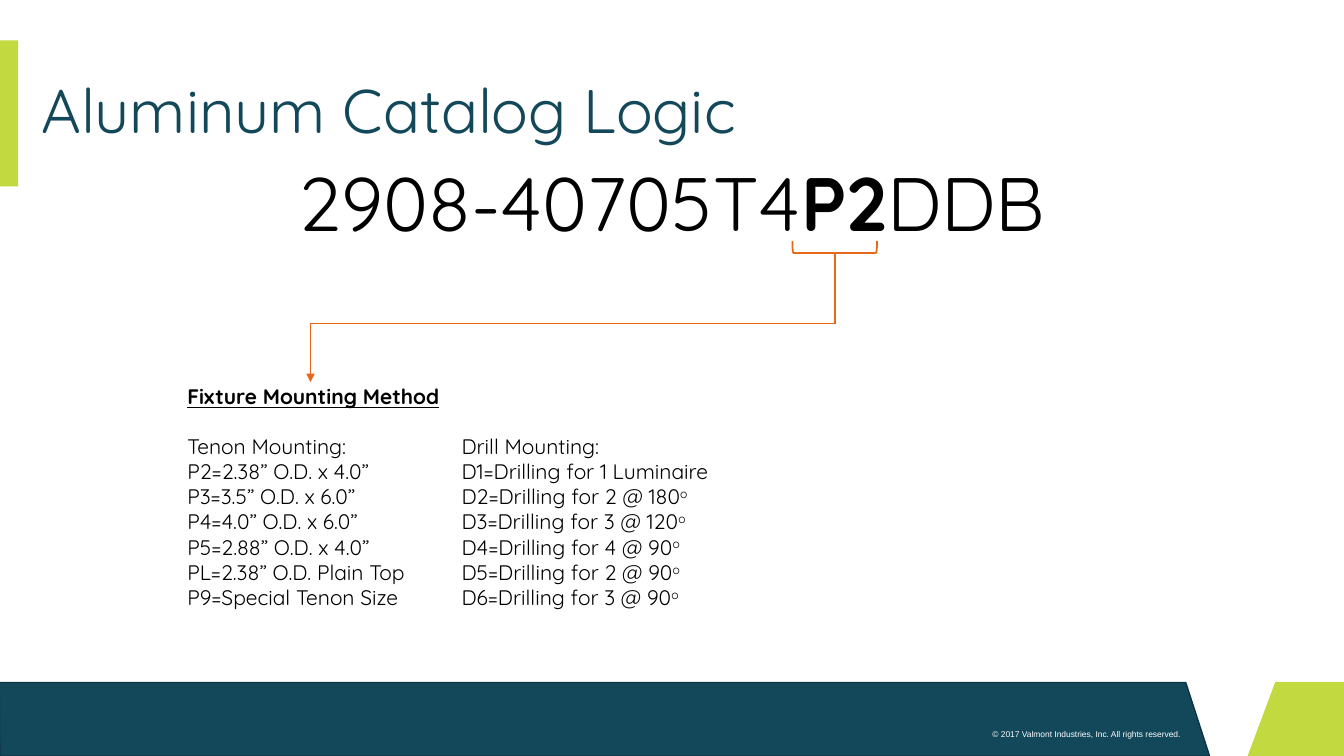
from dataclasses import dataclass

from lxml.etree import SubElement
from pptx import Presentation
from pptx.dml.color import RGBColor
from pptx.enum.shapes import MSO_CONNECTOR, MSO_SHAPE
from pptx.enum.text import MSO_ANCHOR, MSO_AUTO_SIZE, PP_ALIGN
from pptx.oxml.ns import qn
from pptx.util import Pt


@dataclass(frozen=True)
class Theme:
    teal: str = "13485B"
    teal_edge: str = "0E3543"
    lime: str = "C3D940"
    orange: str = "E6681A"
    black: str = "000000"
    white: str = "FFFFFF"
    font: str = "Quicksand"
    footer_font: str = "Arial"
    code_size: float = 54
    title_size: float = 44
    body_size: float = 15
    footer_size: float = 6
    line_width: float = 1.25


def write(para, text, size, color, font, bold=False, underline=False, raised=False):
    span = para.add_run()
    span.text = text
    span.font.size = Pt(size)
    span.font.name = font
    span.font.bold = bold
    span.font.underline = underline
    span.font.color.rgb = RGBColor.from_string(color)
    if raised:
        span._r.get_or_add_rPr().set("baseline", "30000")


class SlideBuilder:
    def __init__(self, page, theme):
        self.page = page
        self.theme = theme

    def paint(self, shape, fill=None, line=None, line_width=1):
        shape.shadow.inherit = False
        if fill:
            shape.fill.solid()
            shape.fill.fore_color.rgb = RGBColor.from_string(fill)
        else:
            shape.fill.background()
        if line:
            shape.line.color.rgb = RGBColor.from_string(line)
            shape.line.width = Pt(line_width)
        else:
            shape.line.fill.background()

    def polygon(self, points, fill, line=None):
        start, *others = [(Pt(x), Pt(y)) for x, y in points]
        outline = self.page.shapes.build_freeform(*start)
        outline.add_line_segments(others, close=True)
        self.paint(outline.convert_to_shape(), fill, line)

    def preset(self, kind, left, top, width, height, rotation=0, **paint_style):
        shape = self.page.shapes.add_shape(
            kind, Pt(left), Pt(top), Pt(width), Pt(height))
        shape.rotation = rotation
        self.paint(shape, **paint_style)

    def connector(self, start, end, arrow=False):
        line = self.page.shapes.add_connector(
            MSO_CONNECTOR.STRAIGHT, *map(Pt, start + end))
        line.line.color.rgb = RGBColor.from_string(self.theme.orange)
        line.line.width = Pt(self.theme.line_width)
        if arrow:
            SubElement(line.line._get_or_add_ln(), qn("a:tailEnd"), type="triangle")
        SubElement(line._element.spPr, qn("a:effectLst"))

    def text(self, left, top, width, height, rows, align=PP_ALIGN.LEFT,
             anchor=MSO_ANCHOR.TOP, wrap=True, grow=True, spacing=None, **style):
        """Add a text box; each row is a list of (text, extra format) pairs."""
        box = self.page.shapes.add_textbox(Pt(left), Pt(top), Pt(width), Pt(height))
        frame = box.text_frame
        frame.word_wrap = wrap
        frame.vertical_anchor = anchor
        frame.auto_size = MSO_AUTO_SIZE.SHAPE_TO_FIT_TEXT if grow else MSO_AUTO_SIZE.NONE
        look = {"size": self.theme.body_size, "color": self.theme.black,
                "font": self.theme.font} | style
        for index, row in enumerate(rows):
            para = frame.add_paragraph() if index else frame.paragraphs[0]
            para.alignment = align
            if spacing:
                para.line_spacing = spacing
            for text, extra in row:
                write(para, text, **(look | extra))


def add_frame(builder):
    theme = builder.theme
    builder.polygon([(0, 540), (-0.5, 487.5), (847, 487.5), (864, 540)],
                    theme.teal, theme.teal_edge)
    builder.polygon([(960, 487), (911, 487), (891, 540.5), (960, 540.5)], theme.lime)
    builder.preset(MSO_SHAPE.RECTANGLE, 0, 28.8, 13, 104.4, fill=theme.lime)
    builder.text(670.3, 517, 180, 14.5,
                 [[("© 2017 Valmont Industries, Inc. All rights reserved.", {})]],
                 align=PP_ALIGN.RIGHT, size=theme.footer_size,
                 font=theme.footer_font, color=theme.white)


def add_callout(builder):
    theme = builder.theme
    code_x, heading_x, turn_y = 596.2, 221.8, 231.1
    builder.preset(MSO_SHAPE.RIGHT_BRACKET, 591.9, 146.2, 8.6, 60.5, rotation=90,
                   line=theme.orange, line_width=theme.line_width)
    builder.connector((heading_x, turn_y), (heading_x, 272.9), arrow=True)
    builder.connector((code_x, 180.7), (code_x, turn_y))
    builder.connector((heading_x, turn_y), (code_x, turn_y))


def add_wording(builder):
    theme = builder.theme
    builder.text(22.3, 28.8, 938, 104.4, [[("Aluminum Catalog Logic", {})]],
                 anchor=MSO_ANCHOR.MIDDLE, grow=False, spacing=0.9,
                 size=theme.title_size, color=theme.teal)
    builder.text(204.5, 108, 551, 72.7,
                 [[("2908-40705T4", {}), ("P2", {"bold": True}), ("DDB", {})]],
                 align=PP_ALIGN.CENTER, wrap=False, size=theme.code_size)
    builder.text(126.7, 270.7, 678, 25.4, [[("Fixture Mounting Method", {})]],
                 bold=True, underline=True)

    tenons = ["Tenon Mounting:", "P2=2.38” O.D. x 4.0”", "P3=3.5” O.D. x 6.0”",
              "P4=4.0” O.D. x 6.0”", "P5=2.88” O.D. x 4.0”",
              "PL=2.38” O.D. Plain Top", "P9=Special Tenon Size"]
    builder.text(126.7, 306, 191, 134.6, [[(tenon, {})] for tenon in tenons])

    drillings = [(2, 180), (3, 120), (4, 90), (2, 90), (3, 90)]
    drill_rows = [[("Drill Mounting:", {})], [("D1=Drilling for 1 Luminaire", {})]]
    for number, (count, angle) in enumerate(drillings, start=2):
        drill_rows.append([(f"D{number}=Drilling for {count} @ {angle}", {}),
                           ("o", {"raised": True})])
    builder.text(322.6, 306, 222, 134.6, drill_rows)


def main():
    deck = Presentation()
    deck.slide_width, deck.slide_height = Pt(960), Pt(540)
    page = deck.slides.add_slide(deck.slide_layouts[6])
    builder = SlideBuilder(page, Theme())
    add_frame(builder)
    add_callout(builder)
    add_wording(builder)
    deck.save("out.pptx")


if __name__ == "__main__":
    main()
